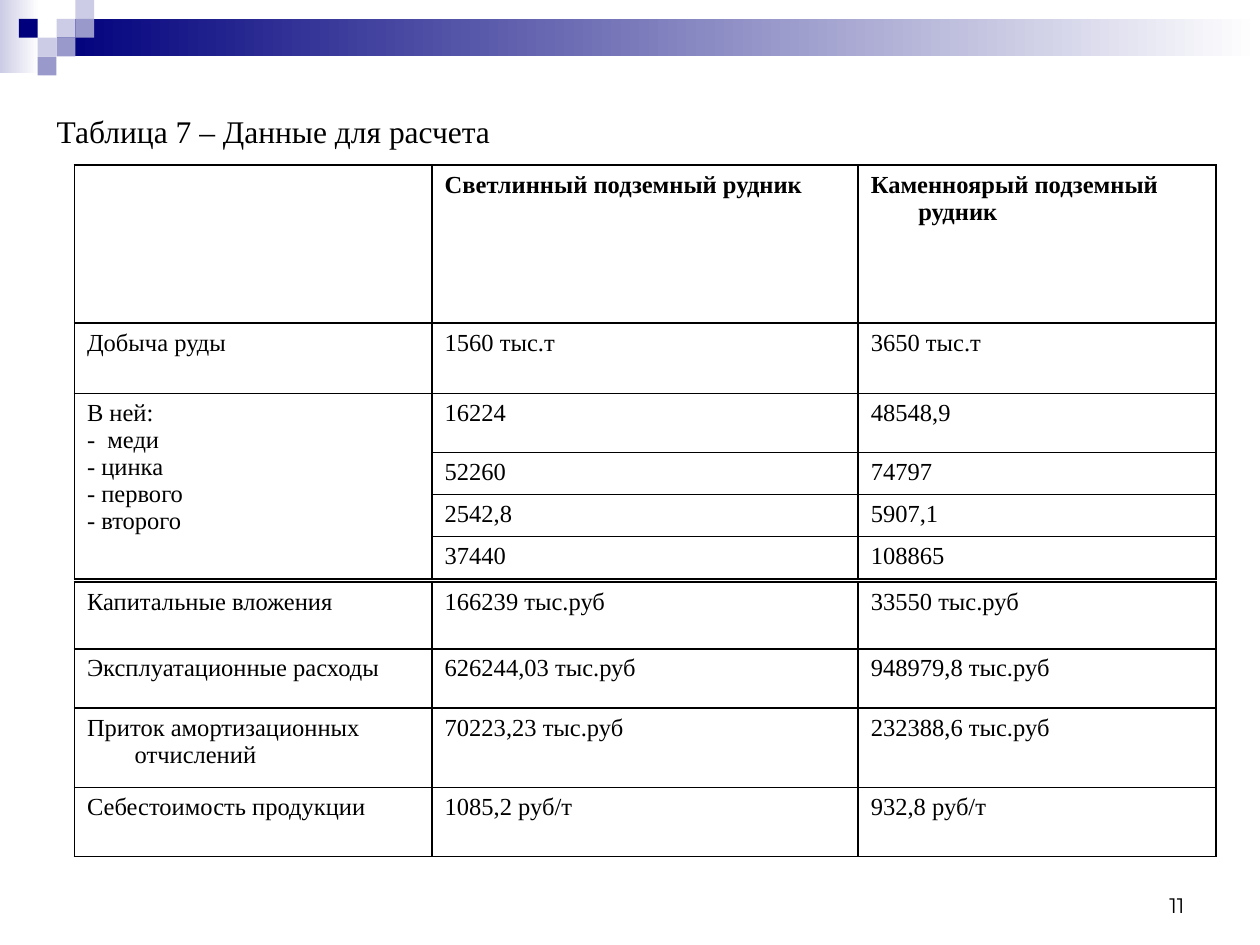
from lxml import etree
from pptx import Presentation
from pptx import util as u
from pptx.dml import color
from pptx.enum import shapes, text
from pptx.oxml import ns

COLORS = {"navy": "00007D", "violet": "9999CC", "lilac": "CCCCE6",
          "white": "FFFFFF", "black": "000000"}
SERIF = "Times New Roman"


def add_run(paragraph, words, size, font=SERIF, bold=False):
    run = paragraph.add_run()
    run.text = words
    run.font.size = u.Pt(size)
    run.font.name = font
    run.font.bold = bold
    run.font.color.rgb = color.RGBColor.from_string(COLORS["black"])


def add_bar(left, top, width, height, start, end=None):
    bar = slide.shapes.add_shape(shapes.MSO_SHAPE.RECTANGLE, u.Cm(left), u.Cm(top),
                                 u.Cm(width), u.Cm(height))
    bar.shadow.inherit = False
    bar.line.fill.background()
    if end is None:
        bar.fill.solid()
        bar.fill.fore_color.rgb = color.RGBColor.from_string(COLORS[start])
        return
    bar.fill.gradient()
    bar.fill.gradient_angle = 0
    for stop, name in zip(bar.fill.gradient_stops, (start, end)):
        stop.color.rgb = color.RGBColor.from_string(COLORS[name])


deck = Presentation()
deck.slide_width, deck.slide_height = u.Cm(25.4), u.Cm(19.05)
slide = deck.slides.add_slide(deck.slide_layouts[5])

# Header band and its mosaic of squares, placed by column and row
add_bar(0, 0, 0.79, 1.47, "lilac", "white")
add_bar(1.14, 0.38, 24.26, 0.76, "navy", "white")
SQUARE = 0.38
mosaic = [(3, 1, "lilac"), (4, 0, "lilac"), (4, 1, "violet"), (2, 2, "lilac"),
          (1, 1, "navy"), (3, 2, "violet"), (2, 3, "violet")]
for column, row, name in mosaic:
    add_bar(column * SQUARE, row * SQUARE, SQUARE, SQUARE, name)

# Caption
caption = slide.shapes.title
caption.left, caption.top = u.Cm(0.89), u.Cm(2.13)
caption.width, caption.height = u.Cm(9.8), u.Cm(1.02)
caption.text_frame.vertical_anchor = text.MSO_ANCHOR.MIDDLE
caption.text_frame.word_wrap = False
caption_line = caption.text_frame.paragraphs[0]
caption_line.alignment = text.PP_ALIGN.LEFT
add_run(caption_line, "Таблица 7 – Данные для расчета", 18)

# Table data: top, row heights, rows of cells
output_rows = [
    ["", "Светлинный подземный рудник", "Каменноярый подземный рудник"],
    ["Добыча руды", "1560 тыс.т", "3650 тыс.т"],
    ["В ней:\n-  меди\n- цинка\n- первого\n- второго", "16224", "48548,9"],
    ["", "52260", "74797"],
    ["", "2542,8", "5907,1"],
    ["", "37440", "108865"],
]
cost_rows = [
    ["Капитальные вложения", "166239 тыс.руб", "33550 тыс.руб"],
    ["Эксплуатационные расходы", "626244,03 тыс.руб", "948979,8 тыс.руб"],
    ["Приток амортизационных отчислений", "70223,23 тыс.руб", "232388,6 тыс.руб"],
    ["Себестоимость продукции", "1085,2 руб/т", "932,8 руб/т"],
]
blocks = [(3.33, [3.18, 1.42, 1.19, 0.85, 0.85, 0.85], output_rows),
          (11.73, [1.35, 1.19, 1.6, 1.4], cost_rows)]
column_widths = [7.21, 8.59, 7.21]
HANGING = u.Cm(0.96)

# Tables
for top, heights, rows in blocks:
    table = slide.shapes.add_table(len(rows), len(column_widths), u.Cm(1.5), u.Cm(top),
                                   u.Cm(sum(column_widths)), u.Cm(sum(heights))).table
    table.first_row = table.horz_banding = False
    for column, width in zip(table.columns, column_widths):
        column.width = u.Cm(width)
    for row, height in zip(table.rows, heights):
        row.height = u.Cm(height)
    if rows is output_rows:
        table.cell(2, 0).merge(table.cell(5, 0))

    for r, row in enumerate(rows):
        for c, words in enumerate(row):
            cell = table.cell(r, c)
            borders = cell._tc.get_or_add_tcPr()
            for side in ("a:lnL", "a:lnR", "a:lnT", "a:lnB"):
                line = etree.SubElement(borders, ns.qn(side), w=str(u.Pt(1)))
                paint = etree.SubElement(line, ns.qn("a:solidFill"))
                etree.SubElement(paint, ns.qn("a:srgbClr"), val=COLORS["black"])
            cell.fill.background()
            if not words:
                continue
            for i, item in enumerate(words.split("\n")):
                frame = cell.text_frame
                paragraph = frame.add_paragraph() if i else frame.paragraphs[0]
                indents = paragraph._p.get_or_add_pPr()
                indents.set("marL", str(HANGING))
                indents.set("indent", str(-HANGING))
                add_run(paragraph, item, 14, bold=rows is output_rows and r == 0)

# Page number
page_number = slide.shapes.add_textbox(u.Cm(18.21), u.Cm(17.35), u.Cm(5.92), u.Cm(1.27))
page_number.text_frame.word_wrap = True
page_number.text_frame.vertical_anchor = text.MSO_ANCHOR.BOTTOM
page_line = page_number.text_frame.paragraphs[0]
page_line.alignment = text.PP_ALIGN.RIGHT
add_run(page_line, "11", 12, font="Montserrat")

deck.save("out.pptx")
